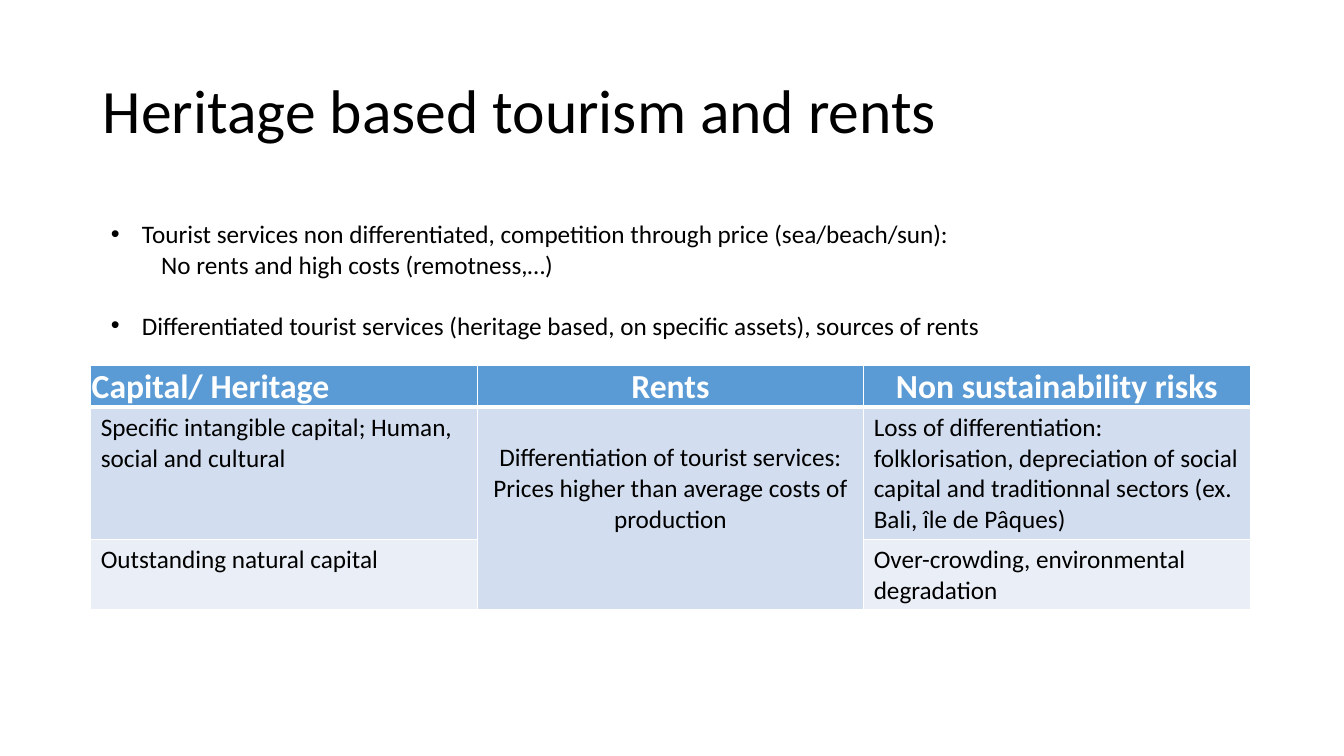
"""Build a slide on heritage based tourism and rents: title, bullets and table."""
from lxml.etree import SubElement
from pptx import Presentation
from pptx.dml.color import RGBColor
from pptx.enum.text import MSO_ANCHOR, PP_ALIGN
from pptx.oxml.ns import qn
from pptx.util import Inches, Pt

BLACK = RGBColor(0x00, 0x00, 0x00)
WHITE = RGBColor(0xFF, 0xFF, 0xFF)
BLUE = RGBColor(0x5B, 0x9B, 0xD5)
LIGHT = RGBColor(0xD2, 0xDE, 0xEF)
PALE = RGBColor(0xEA, 0xEF, 0xF7)

BODY = {"name": "Calibri", "size": Pt(18), "bold": False}
HEAD = {**BODY, "size": Pt(24), "bold": True}
TITLE = {**BODY, "size": Pt(44)}


def write(para, text, style, color=BLACK):
    run = para.add_run()
    run.text = text
    for key, value in style.items():
        setattr(run.font, key, value)
    run.font.color.rgb = color


def edge(cell, side, width):
    line = SubElement(cell._tc.get_or_add_tcPr(), qn(f"a:ln{side}"), w=str(Pt(width)))
    fill = SubElement(line, qn("a:solidFill"))
    SubElement(fill, qn("a:srgbClr"), val=str(WHITE))


deck = Presentation()
deck.slide_width, deck.slide_height = Inches(13.33), Inches(7.5)
slide = deck.slides.add_slide(deck.slide_layouts[6])

title = slide.shapes.add_textbox(Inches(0.92), Inches(0.4), Inches(11.5), Inches(1.45))
frame = title.text_frame
frame.word_wrap = True
frame.vertical_anchor = MSO_ANCHOR.MIDDLE
frame.paragraphs[0].line_spacing = 0.9
write(frame.paragraphs[0], "Heritage based tourism and rents", TITLE)

points = [
    ("Tourist services non differentiated, competition through price (sea/beach/sun):", 0, 0),
    ("No rents and high costs (remotness,…)", 1, 0),
    ("Differentiated tourist services (heritage based, on specific assets), sources of rents", 0, 22),
]
box = slide.shapes.add_textbox(Inches(1), Inches(2.12), Inches(11.32), Inches(1.31))
frame = box.text_frame
frame.word_wrap = True
for i, (text, level, gap) in enumerate(points):
    para = frame.add_paragraph() if i else frame.paragraphs[0]
    para.level = level
    para.space_before = Pt(gap)
    props = para._p.get_or_add_pPr()
    left, hang = (0.5, 0) if level else (0.31, -0.31)
    props.set("marL", str(Inches(left)))
    props.set("indent", str(Inches(hang)))
    if not level:
        SubElement(props, qn("a:buFont"), typeface="Arial")
        SubElement(props, qn("a:buChar"), char="•")
    write(para, text, BODY)

rows = [
    ("Capital/ Heritage", "Rents", "Non sustainability risks"),
    (
        "Specific intangible capital; Human, social and cultural",
        "Differentiation of tourist services: Prices higher than average costs of production",
        "Loss of differentiation: folklorisation, depreciation of social capital "
        "and traditionnal sectors (ex. Bali, île de Pâques)",
    ),
    ("Outstanding natural capital", "", "Over-crowding, environmental degradation"),
]
highs = [0.41, 1.31, 0.69]
fills = [BLUE, LIGHT, PALE]
thin = {"margin_left": 0.01, "margin_right": 0.01, "margin_top": 0.01, "margin_bottom": 0}

grid = slide.shapes.add_table(
    3, 3, Inches(0.9), Inches(3.63), Inches(11.5), Inches(sum(highs))
).table
for r, texts in enumerate(rows):
    grid.rows[r].height = Inches(highs[r])
    for c, text in enumerate(texts):
        cell = grid.cell(r, c)
        for side in "LRTB":
            thick = (r, side) in [(0, "B"), (1, "T")]
            edge(cell, side, 3 if thick else 1)
        cell.fill.solid()
        cell.fill.fore_color.rgb = LIGHT if r and c == 1 else fills[r]
        para = cell.text_frame.paragraphs[0]
        if c == 1 or (r == 0 and c):
            para.alignment = PP_ALIGN.CENTER
        if r == 0:
            for key, value in thin.items():
                setattr(cell, key, Inches(value))
        if text:
            write(para, text, BODY if r else HEAD, BLACK if r else WHITE)

rents = grid.cell(1, 1)
rents.merge(grid.cell(2, 1))
rents.margin_top = Inches(0.35)

deck.save("out.pptx")
